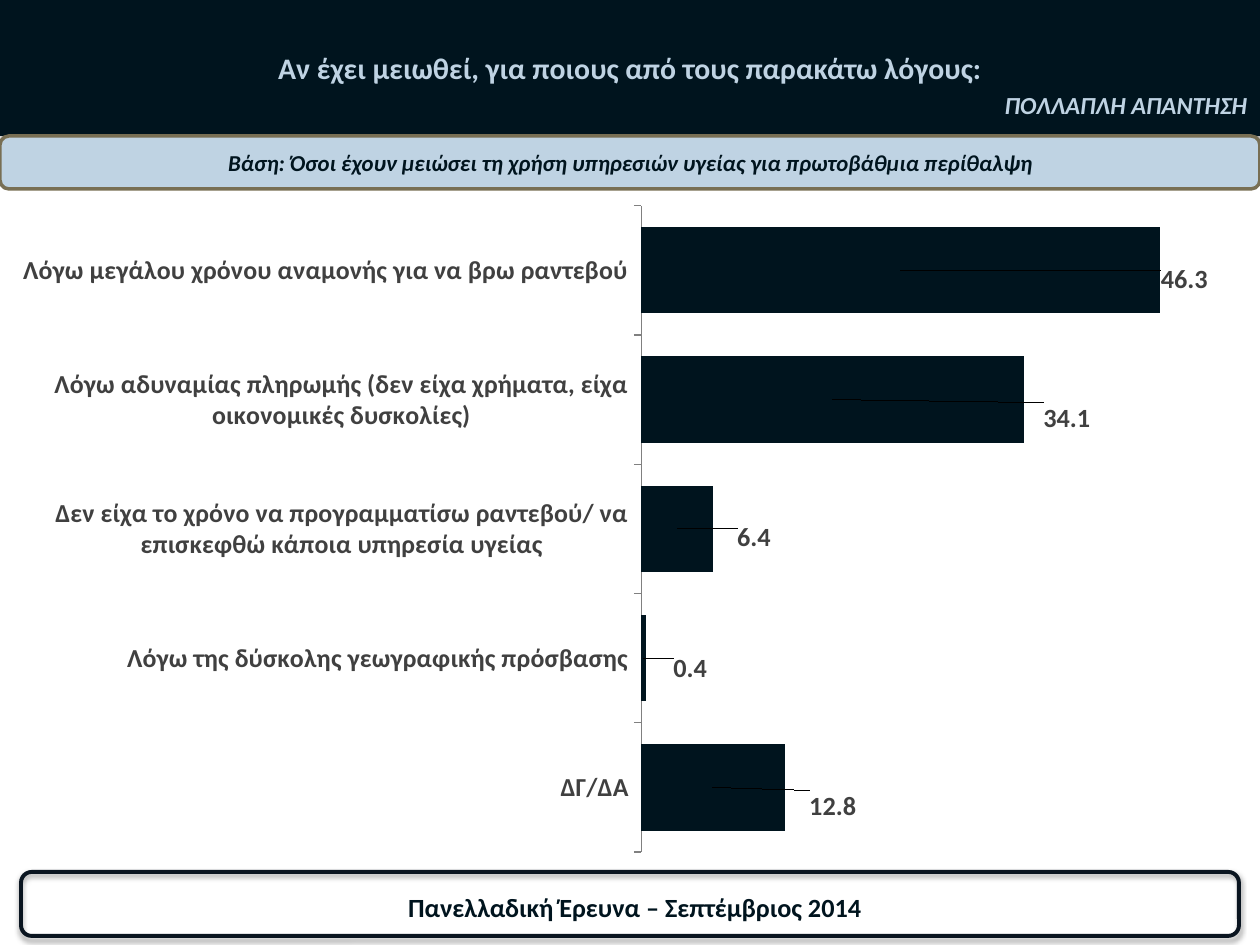
from lxml.etree import SubElement
from pptx import Presentation
from pptx.chart.data import CategoryChartData
from pptx.dml.color import RGBColor
from pptx.enum.chart import XL_CHART_TYPE as ChartType
from pptx.enum.chart import XL_LABEL_POSITION as LabelPosition
from pptx.enum.chart import XL_TICK_LABEL_POSITION as TickLabels
from pptx.enum.chart import XL_TICK_MARK as TickMark
from pptx.enum.shapes import MSO_SHAPE as Shape
from pptx.enum.text import MSO_ANCHOR as Anchor
from pptx.enum.text import PP_ALIGN as Align
from pptx.oxml import parse_xml
from pptx.oxml.ns import nsdecls, qn
from pptx.util import Pt

PX = 914400 / 126
WIDTH, HEIGHT = 1260, 945
HEADER_HEIGHT = 136
CHART_TOP, CHART_HEIGHT = 158, 724
FONT = "Calibri"
NAVY = RGBColor(0x00, 0x14, 0x1E)
FRAME = RGBColor(0x0A, 0x15, 0x20)
PALE = RGBColor(0xBF, 0xD3, 0xE3)
OLIVE = RGBColor(0x78, 0x6F, 0x54)
GREY = RGBColor(0x40, 0x40, 0x40)
AXIS = RGBColor(0x80, 0x80, 0x80)
BLACK = RGBColor(0x00, 0x00, 0x00)
WHITE = RGBColor(0xFF, 0xFF, 0xFF)

REASONS = [
    ("Λόγω μεγάλου χρόνου αναμονής για να βρω ραντεβού", 46.3, (283, 9)),
    ("Λόγω αδυναμίας πληρωμής (δεν είχα χρήματα, είχα οικονομικές δυσκολίες)", 34.1, (234, 19)),
    ("Δεν είχα το χρόνο να προγραμματίσω ραντεβού/ να επισκεφθώ κάποια υπηρεσία υγείας", 6.4, (77, 8)),
    ("Λόγω της δύσκολης γεωγραφικής πρόσβασης", 0.4, (46, 10)),
    ("ΔΓ/ΔΑ", 12.8, (120, 19)),
]


def px(*lengths):
    return [round(length * PX) for length in lengths]


def style_font(font, size, color, bold=True, italic=False):
    font.name = FONT
    font.size = Pt(size)
    font.bold = bold
    font.italic = italic
    font.color.rgb = color


def write(shape, text, size, color, align=Align.CENTER, italic=False):
    frame = shape.text_frame
    frame.word_wrap = True
    frame.vertical_anchor = Anchor.MIDDLE
    para = frame.paragraphs[0]
    para.alignment = align
    span = para.add_run()
    span.text = text
    style_font(span.font, size, color, italic=italic)


def add_text(slide, place, *args, **style):
    write(slide.shapes.add_textbox(*px(*place)), *args, **style)


def add_panel(slide, kind, place, fill=None, line=None, line_width=0):
    panel = slide.shapes.add_shape(kind, *px(*place))
    panel.shadow.inherit = False
    if fill is None:
        panel.fill.background()
    else:
        panel.fill.solid()
        panel.fill.fore_color.rgb = fill
    if line is None:
        panel.line.fill.background()
    else:
        panel.line.color.rgb = line
        panel.line.width = Pt(line_width)
    return panel


def add_shadow(panel, distance, opacity):
    effects = panel._element.spPr.find(qn("a:effectLst"))
    shadow = SubElement(effects, qn("a:outerShdw"), blurRad=str(Pt(3.1)),
                        dist=str(Pt(distance)), dir="5400000", rotWithShape="0")
    color = SubElement(shadow, qn("a:srgbClr"), val="000000")
    SubElement(color, qn("a:alpha"), val=str(opacity * 1000))


def manual_layout(x, y, extra=""):
    return parse_xml(
        f'<c:layout {nsdecls("c")}><c:manualLayout>{extra}'
        f'<c:x val="{x:.3f}"/><c:y val="{y:.3f}"/></c:manualLayout></c:layout>')


def set_plot_area(chart):
    layout = manual_layout(
        0.509, 0.066,
        '<c:layoutTarget val="inner"/><c:xMode val="edge"/><c:yMode val="edge"/>')
    for side, share in (("w", 0.445), ("h", 0.893)):
        SubElement(layout[0], qn(f"c:{side}"), val=str(share))
    area = chart._chartSpace.chart.plotArea
    for old in area.findall(qn("c:layout")):
        area.remove(old)
    area.insert(0, layout)


def style_axes(chart):
    reasons = chart.category_axis
    reasons.reverse_order = True
    reasons.major_tick_mark = TickMark.OUTSIDE
    reasons.format.line.color.rgb = AXIS
    style_font(reasons.tick_labels.font, 14.8, GREY)
    shares = chart.value_axis
    shares.minimum_scale, shares.maximum_scale = 0, 50
    shares.has_major_gridlines = False
    shares.major_tick_mark = TickMark.NONE
    shares.tick_label_position = TickLabels.LOW
    shares.format.line.fill.background()
    style_font(shares.tick_labels.font, 5, WHITE)


def style_labels(series):
    labels = series.data_labels
    labels.show_value = True
    labels.number_format = "#,##0.0"
    labels.number_format_is_linked = False
    style_font(labels.font, 15, GREY)
    for index in range(len(REASONS)):
        label = series.points[index].data_label
        style_font(label.font, 15, GREY)
        label.position = LabelPosition.CENTER
    for element, (_, _, (right, down)) in zip(series._element.xpath(".//c:dLbl"), REASONS):
        element.find(qn("c:idx")).addnext(manual_layout(right / WIDTH, down / CHART_HEIGHT))


def add_reasons_chart(slide):
    data = CategoryChartData(number_format="General")
    data.categories = [name for name, _, _ in REASONS]
    data.add_series("Series 1", [share for _, share, _ in REASONS])
    chart = slide.shapes.add_chart(
        ChartType.BAR_STACKED, *px(0, CHART_TOP, WIDTH, CHART_HEIGHT), data).chart
    chart.has_legend = False
    chart.has_title = False
    style_font(chart.font, 18, BLACK, bold=False)
    set_plot_area(chart)
    style_axes(chart)
    plot = chart.plots[0]
    plot.gap_width = 50
    plot.overlap = 100
    plot.vary_by_categories = False
    series = plot.series[0]
    series.format.fill.solid()
    series.format.fill.fore_color.rgb = NAVY
    style_labels(series)


def main():
    deck = Presentation()
    deck.slide_width, deck.slide_height = px(WIDTH, HEIGHT)
    slide = deck.slides.add_slide(deck.slide_layouts[6])

    header_place = (0, 0, WIDTH, HEADER_HEIGHT)
    header = add_panel(slide, Shape.RECTANGLE, header_place, fill=NAVY)
    add_shadow(header, 1.8, 35)
    footer = add_panel(slide, Shape.ROUNDED_RECTANGLE, (21, 872, 1218, 64),
                       line=FRAME, line_width=2.25)
    add_shadow(footer, 1.6, 38)
    add_text(slide, (252, 885, 766, 44), "Πανελλαδική Έρευνα – Σεπτέμβριος 2014", 15, NAVY)
    add_text(slide, header_place,
             "Αν έχει μειωθεί, για ποιους από τους παρακάτω λόγους:", 17, PALE)
    add_reasons_chart(slide)
    base = add_panel(slide, Shape.ROUNDED_RECTANGLE, (0, HEADER_HEIGHT, WIDTH, 53),
                     fill=PALE, line=OLIVE, line_width=2)
    write(base, "Βάση: Όσοι έχουν μειώσει τη χρήση υπηρεσιών υγείας για πρωτοβάθμια περίθαλψη",
          13, NAVY, italic=True)
    add_text(slide, (955, 84, 305, 42), "ΠΟΛΛΑΠΛΗ ΑΠΑΝΤΗΣΗ", 14, PALE,
             align=Align.RIGHT, italic=True)
    deck.save("out.pptx")


if __name__ == "__main__":
    main()
